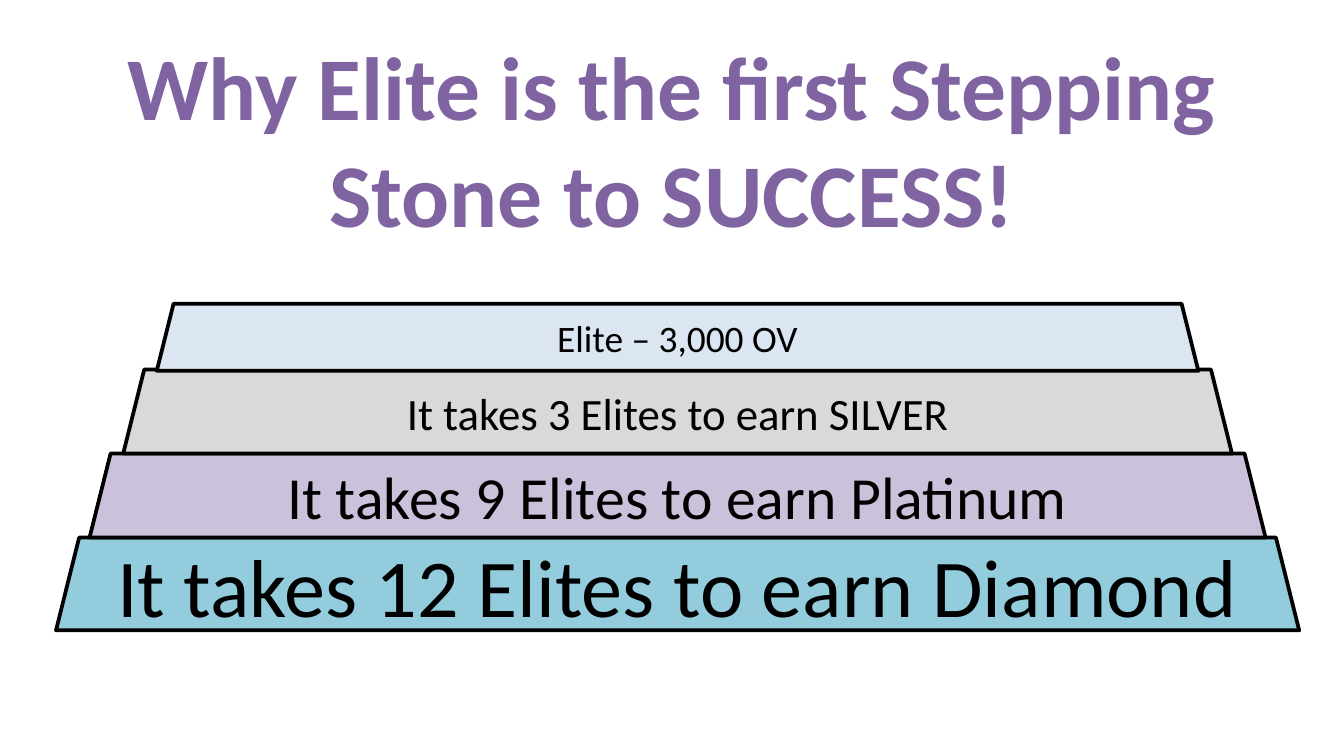
import pptx
import pptx.dml.color
import pptx.enum.shapes
import pptx.enum.text
import pptx.util

Inches = pptx.util.Inches
Pt = pptx.util.Pt


def color(hex_value):
    return pptx.dml.color.RGBColor.from_string(hex_value)


def write_text(shape, text, size, text_color="000000", bold=False, font="Calibri"):
    """Write one centred paragraph in the middle of a shape."""
    frame = shape.text_frame
    frame.word_wrap = True
    frame.vertical_anchor = pptx.enum.text.MSO_ANCHOR.MIDDLE
    paragraph = frame.paragraphs[0]
    paragraph.alignment = pptx.enum.text.PP_ALIGN.CENTER
    run = paragraph.add_run()
    run.text = text
    run.font.name = font
    run.font.size = Pt(size)
    run.font.bold = bold
    run.font.color.rgb = color(text_color)


class SlideBuilder:
    title_color = "8064A2"
    outline_color = "000000"
    outline_width = 2

    def __init__(self, slide):
        self.slide = slide

    def add_title(self, text, left, top, width, height):
        shape = self.slide.shapes.add_textbox(
            Inches(left), Inches(top), Inches(width), Inches(height))
        write_text(shape, text, 48, text_color=self.title_color, bold=True)

    def add_step(self, text, size, fill, left, top, width, height):
        shape = self.slide.shapes.add_shape(
            pptx.enum.shapes.MSO_SHAPE.TRAPEZOID,
            Inches(left), Inches(top), Inches(width), Inches(height))
        shape.shadow.inherit = False
        shape.fill.solid()
        shape.fill.fore_color.rgb = color(fill)
        shape.line.color.rgb = color(self.outline_color)
        shape.line.width = Pt(self.outline_width)
        write_text(shape, text, size)


def main():
    # Widescreen page, 16:9
    presentation = pptx.Presentation()
    presentation.slide_width = Inches(10)
    presentation.slide_height = Inches(10 * 9 / 16)
    slide = presentation.slides.add_slide(presentation.slide_layouts[6])
    builder = SlideBuilder(slide)

    # Title
    builder.add_title("Why Elite is the first Stepping Stone to SUCCESS!", 0.5, 0.06, 9, 1.94)

    # Steps from the base up, each one narrower by the same inset on both sides
    base_left, base_top, base_width, inset = 5 / 12, 4, 9.25, 0.25
    middle_height = 5 / 8
    steps = [
        ("It takes 12 Elites to earn Diamond", 44, "93CDDD", base_top, 0.69),
        ("It takes 9 Elites to earn Platinum", 32, "CCC1DA",
         base_top - middle_height, middle_height),
        ("It takes 3 Elites to earn SILVER", 24, "D9D9D9",
         base_top - 2 * middle_height, middle_height),
        ("Elite – 3,000 OV", 20, "DCE6F2", 2.26, 0.5),
    ]
    for level, (text, size, fill, top, height) in enumerate(steps):
        builder.add_step(text, size, fill, base_left + level * inset, top,
                         base_width - 2 * level * inset, height)

    presentation.save("out.pptx")


if __name__ == "__main__":
    main()
